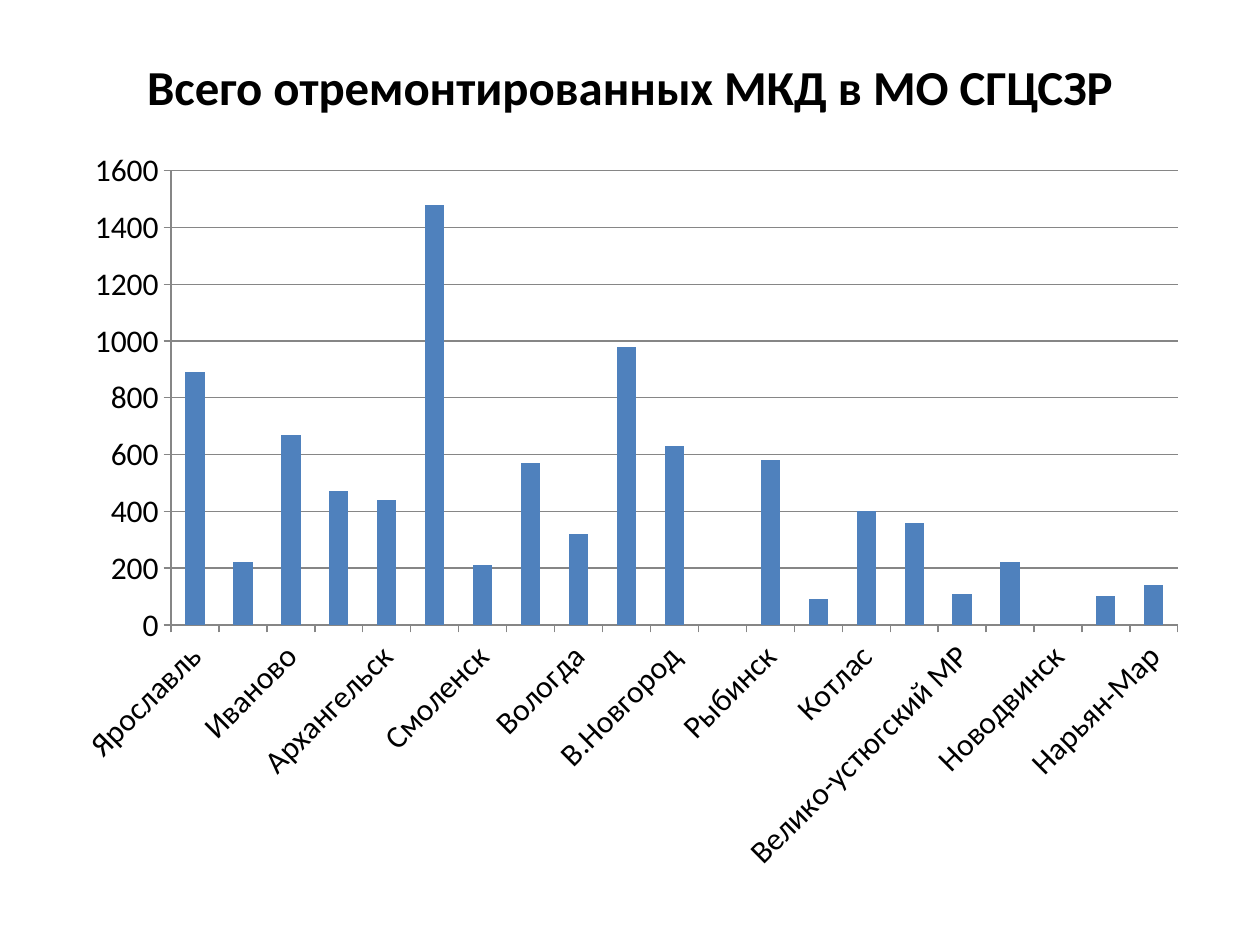
from dataclasses import dataclass

from lxml.etree import SubElement
from pptx import Presentation
from pptx.chart.data import CategoryChartData
from pptx.dml.color import RGBColor
from pptx.enum.chart import XL_CHART_TYPE, XL_TICK_MARK
from pptx.enum.text import MSO_ANCHOR, PP_ALIGN
from pptx.oxml.ns import qn
from pptx.util import Inches, Pt

REPAIRED_BUILDINGS = {
    "Ярославль": 890,
    "Калининград": 220,
    "Иваново": 670,
    "Тверь": 470,
    "Архангельск": 440,
    "Владимир": 1480,
    "Смоленск": 210,
    "Череповец": 570,
    "Вологда": 320,
    "Кострома": 980,
    "В.Новгород": 630,
    "Псков": None,
    "Рыбинск": 580,
    "Северодвинск": 90,
    "Котлас": 400,
    "Тихвинский МР": 360,
    "Велико-устюгский МР": 110,
    "Старая Русса": 220,
    "Новодвинск": None,
    "Коряжма": 100,
    "Нарьян-Мар": 140,
}


def color(value):
    return RGBColor.from_string(value)


def style_font(font, name, size, ink, bold=False):
    font.name = name
    font.size = Pt(size)
    font.bold = bold
    font.color.rgb = color(ink)


def write(frame, text, align=PP_ALIGN.LEFT, **style):
    para = frame.paragraphs[0]
    para.alignment = align
    span = para.add_run()
    span.text = text
    style_font(span.font, **style)


@dataclass
class SlideBuilder:
    deck: object
    page: object
    typeface: str = "Calibri"
    ink: str = "000000"
    bar: str = "4F81BD"
    rule: str = "868686"

    def place(self, left, top, width, height):
        across, down = self.deck.slide_width, self.deck.slide_height
        return (int(left * across), int(top * down),
                int(width * across), int(height * down))

    def title(self, text, area, size, inset):
        frame = self.page.shapes.add_textbox(*self.place(*area)).text_frame
        frame.word_wrap = True
        frame.vertical_anchor = MSO_ANCHOR.TOP
        frame.margin_top = Inches(inset)
        write(frame, text, align=PP_ALIGN.CENTER, name=self.typeface,
              size=size, ink=self.ink, bold=True)

    def columns(self, values, area, size, plot):
        data = CategoryChartData()
        data.categories = list(values)
        data.add_series("Series 1", list(values.values()))
        chart = self.page.shapes.add_chart(
            XL_CHART_TYPE.COLUMN_STACKED, *self.place(*area), data).chart
        chart.has_legend = False
        chart.has_title = False
        style_font(chart.font, self.typeface, size, self.ink)

        bars = chart.plots[0]
        bars.gap_width = 150
        bars.overlap = 100
        bars.vary_by_categories = False
        fill = bars.series[0].format.fill
        fill.solid()
        fill.fore_color.rgb = color(self.bar)

        cities, counts = chart.category_axis, chart.value_axis
        for axis in (cities, counts):
            axis.major_tick_mark = XL_TICK_MARK.OUTSIDE
            axis.minor_tick_mark = XL_TICK_MARK.NONE
            self.rule_line(axis.format.line)
            style_font(axis.tick_labels.font, self.typeface, size, self.ink)
        cities.has_major_gridlines = False
        counts.has_major_gridlines = True
        self.rule_line(counts.major_gridlines.format.line)
        counts.minimum_scale, counts.maximum_scale = 0, 1600
        counts.major_unit = 200

        label_body = cities._element.find(qn("c:txPr")).find(qn("a:bodyPr"))
        label_body.set("rot", "-2700000")
        label_body.set("vert", "horz")
        self.fix_plot(chart, plot)

    def rule_line(self, line):
        line.color.rgb = color(self.rule)
        line.width = Pt(0.75)

    def fix_plot(self, chart, shares):
        plot_area = chart._chartSpace.chart.plotArea
        layout = plot_area.find(qn("c:layout"))
        if layout is None:
            layout = SubElement(plot_area, qn("c:layout"))
            plot_area.insert(0, layout)
        manual = SubElement(layout, qn("c:manualLayout"))
        settings = {"layoutTarget": "inner", "xMode": "edge", "yMode": "edge"}
        settings.update(zip("xywh", shares))
        for tag, value in settings.items():
            SubElement(manual, qn(f"c:{tag}")).set("val", str(value))


def main():
    deck = Presentation()
    deck.slide_width, deck.slide_height = Inches(10), Inches(7.5)
    page = deck.slides.add_slide(deck.slide_layouts[6])
    builder = SlideBuilder(deck, page)
    builder.columns(REPAIRED_BUILDINGS, area=(0.047, 0.145, 0.906, 0.792),
                    size=18, plot=(0.098, 0.045, 0.882, 0.607))
    builder.title("Всего отремонтированных МКД в МО СГЦСЗР",
                  area=(0.05, 0.04, 0.9, 1 / 6), size=27.9, inset=0.15)
    deck.save("out.pptx")


if __name__ == "__main__":
    main()
